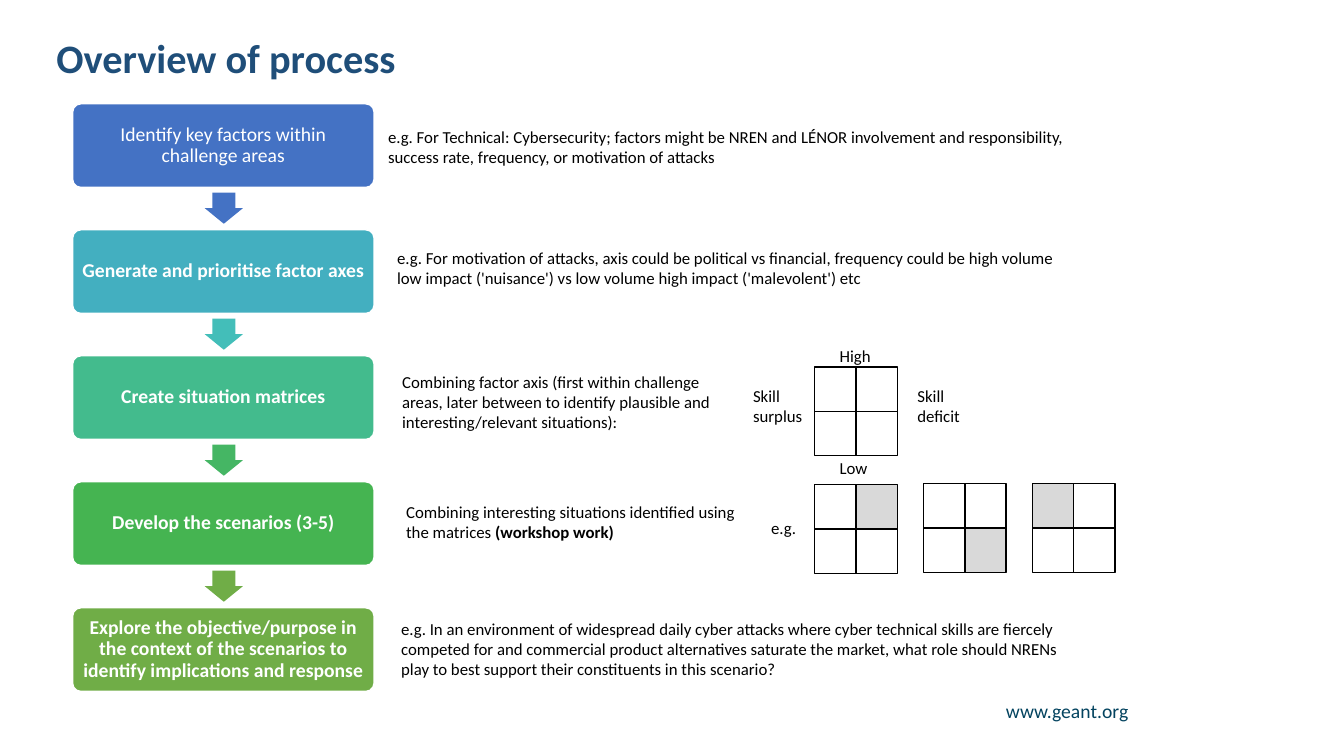
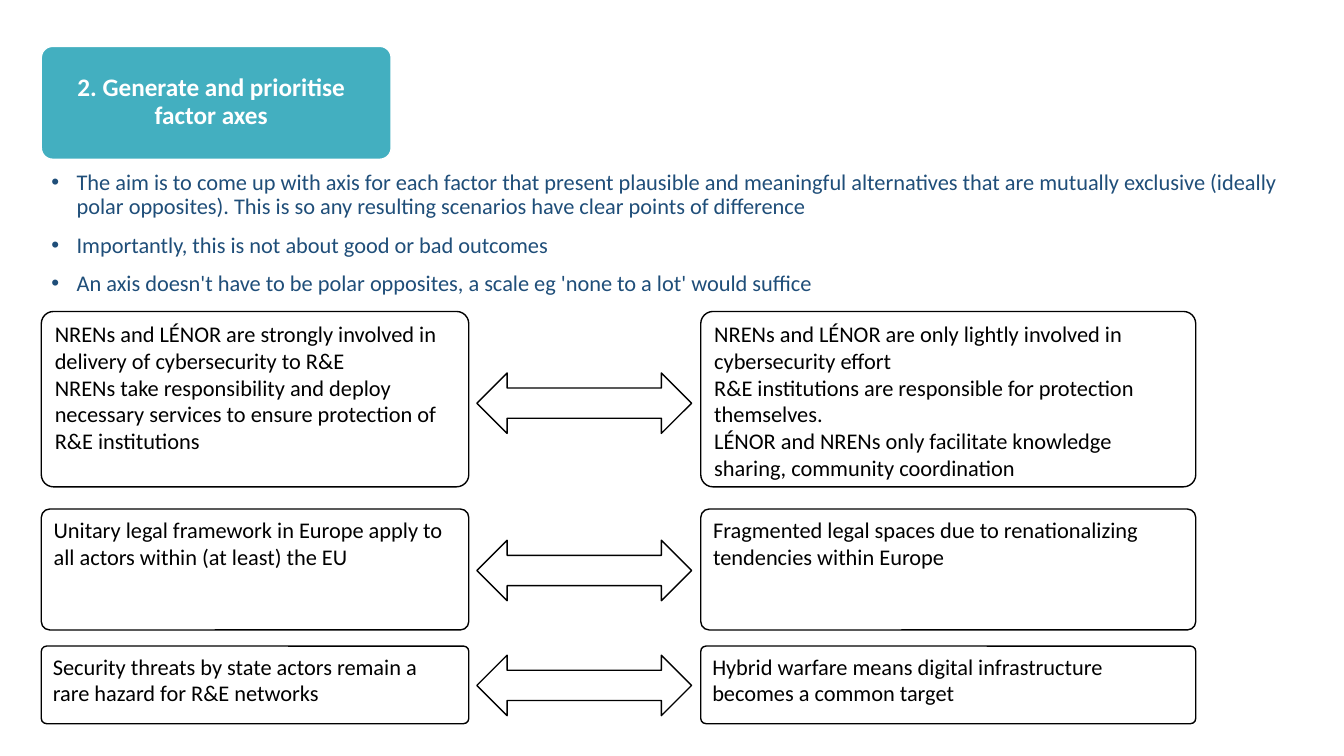
"""Build two slides on a scenario planning process."""
from pptx import Presentation
from pptx.dml.color import RGBColor
from pptx.enum.shapes import MSO_SHAPE
from pptx.enum.text import MSO_ANCHOR, MSO_AUTO_SIZE, PP_ALIGN
from pptx.util import Pt

PX = 9144
FONT = "Calibri"
NAVY = RGBColor(0x1F, 0x4E, 0x79)
PETROL = RGBColor(0x03, 0x43, 0x5F)
BLACK = RGBColor(0, 0, 0)
WHITE = RGBColor(0xFF, 0xFF, 0xFF)
GREY = RGBColor(0xD9, 0xD9, 0xD9)
BLUE = RGBColor(0x44, 0x72, 0xC4)
CYAN = RGBColor(0x43, 0xAF, 0xC0)
TURQUOISE = RGBColor(0x43, 0xBE, 0xB9)
SEA = RGBColor(0x43, 0xBB, 0x8D)
EMERALD = RGBColor(0x45, 0xB6, 0x64)
GREEN = RGBColor(0x45, 0xB4, 0x51)
OLIVE = RGBColor(0x70, 0xAD, 0x47)

TITLE = "Overview of process"
FOOTER = "www.geant.org"
STEPS = [
    ("Identify key factors within challenge areas", BLUE, False),
    ("Generate and prioritise factor axes", CYAN, True),
    ("Create situation matrices", SEA, True),
    ("Develop the scenarios (3-5)", GREEN, True),
    ("Explore the objective/purpose in the context of the scenarios to "
     "identify implications and response", OLIVE, True),
]
ARROW_FILLS = [BLUE, TURQUOISE, EMERALD, OLIVE]
NOTES = [
    ((375, 121, 698, 71),
     "e.g. For Technical: Cybersecurity; factors might be NREN and LÉNOR involvement "
     "and responsibility, success rate, frequency, or motivation of attacks"),
    ((384, 241, 698, 71),
     "e.g. For motivation of attacks, axis could be political vs financial, frequency "
     "could be high volume low impact ('nuisance') vs low volume high impact "
     "('malevolent') etc"),
    ((389, 364, 347, 91),
     "Combining factor axis (first within challenge areas, later between to identify "
     "plausible and interesting/relevant situations):"),
    ((388, 609, 698, 91),
     "e.g. In an environment of widespread daily cyber attacks where cyber technical "
     "skills are fiercely competed for and commercial product alternatives saturate the "
     "market, what role should NRENs play to best support their constituents in this "
     "scenario?"),
    ((823, 338, 56, 50), "High"),
    ((823, 449, 56, 50), "Low"),
    ((900, 378, 79, 71), "Skill deficit"),
    ((737, 378, 79, 71), "Skill surplus"),
    ((755, 509, 56, 50), "e.g."),
]
WORKSHOP_AT = (393, 493, 347, 50)
WORKSHOP = "Combining interesting situations identified using the matrices "
WORKSHOP_BOLD = "(workshop work)"
MATRICES = [(808, 364, None), (808, 481, 1), (916, 480, 3), (1024, 480, 0)]

AXES_TITLE = "2. Generate and prioritise factor axes"
AXES_POINTS = [
    "The aim is to come up with axis for each factor that present plausible and "
    "meaningful alternatives that are mutually exclusive (ideally polar opposites). "
    "This is so any resulting scenarios have clear points of difference",
    "Importantly, this is not about good or bad outcomes",
    "An axis doesn't have to be polar opposites, a scale eg 'none to a lot' would suffice",
]
AXES = [
    (309, 174, 370,
     ["NRENs and LÉNOR are strongly involved in delivery of cybersecurity to R&E",
      "NRENs take responsibility and deploy necessary services to ensure protection "
      "of R&E institutions"],
     ["NRENs and LÉNOR are only lightly involved in cybersecurity effort",
      "R&E institutions are responsible for protection themselves.",
      "LÉNOR and NRENs only facilitate knowledge sharing, community coordination"]),
    (505, 120, 536,
     ["Unitary legal framework in Europe apply to all actors within (at least) the EU"],
     ["Fragmented legal spaces due to renationalizing tendencies within Europe"]),
    (641, 77, 650,
     ["Security threats by state actors remain a rare hazard for R&E networks"],
     ["Hybrid warfare means digital infrastructure becomes a common target"]),
]


def emu(at):
    return [v * PX for v in at]


def place(sp, at):
    sp.left, sp.top, sp.width, sp.height = emu(at)


def write(sp, lines, size, color, bold=False, align=PP_ALIGN.LEFT,
          anchor=MSO_ANCHOR.TOP, spacing=1.0, gap=0, inset=None):
    tf = sp.text_frame
    tf.word_wrap = True
    tf.auto_size = MSO_AUTO_SIZE.NONE
    tf.vertical_anchor = anchor
    if inset is not None:
        tf.margin_left = tf.margin_right = inset * PX
        tf.margin_top = tf.margin_bottom = inset * PX
    tf.text = "\n".join(lines)
    for i, p in enumerate(tf.paragraphs):
        p.alignment = align
        p.line_spacing = spacing
        p.space_before = Pt(gap if i else 0)
        for r in p.runs:
            style(r, size, color, bold)
    return tf


def style(r, size, color, bold):
    r.font.name = FONT
    r.font.size = Pt(size)
    r.font.bold = bold
    r.font.color.rgb = color


def add_shape(s, kind, at, fill=None, line=None, adj=()):
    sp = s.shapes.add_shape(kind, *emu(at))
    sp.shadow.inherit = False
    for i, value in enumerate(adj):
        sp.adjustments[i] = value
    if fill is None:
        sp.fill.background()
    else:
        sp.fill.solid()
        sp.fill.fore_color.rgb = fill
    if line is None:
        sp.line.fill.background()
    else:
        sp.line.color.rgb = line
        sp.line.width = Pt(1)
    return sp


def add_text(s, at, text, size=12, color=BLACK, **kw):
    return write(s.shapes.add_textbox(*emu(at)), [text], size, color, **kw)


def add_matrix(s, left, top, shaded):
    for i in range(4):
        row, col = divmod(i, 2)
        add_shape(s, MSO_SHAPE.RECTANGLE, (left + col * 41, top + row * 44, 41, 44),
                  GREY if i == shaded else None, BLACK)


def step_text(sp, text, size, bold):
    write(sp, [text], size, WHITE, bold, PP_ALIGN.CENTER, MSO_ANCHOR.MIDDLE, 0.9, inset=6)


def overview_slide(prs):
    s = prs.slides.add_slide(prs.slide_layouts[5])
    title = s.shapes.title
    place(title, (46, 36, 1082, 47))
    write(title, [TITLE], 28.8, NAVY, True, anchor=MSO_ANCHOR.MIDDLE, spacing=0.9)
    add_text(s, (961, 691, 168, 37), FOOTER, 14, PETROL, align=PP_ALIGN.RIGHT, spacing=0.9)
    for i, (text, fill, bold) in enumerate(STEPS):
        sp = add_shape(s, MSO_SHAPE.ROUNDED_RECTANGLE, (72, 103 + i * 125, 299, 83),
                       fill, WHITE, [0.1])
        step_text(sp, text, 14, bold)
    for i, fill in enumerate(ARROW_FILLS):
        add_shape(s, MSO_SHAPE.DOWN_ARROW, (203, 191 + i * 125, 38, 31), fill, adj=[0.6, 0.5])
    for at, text in NOTES:
        add_text(s, at, text)
    tf = add_text(s, WORKSHOP_AT, WORKSHOP)
    r = tf.paragraphs[0].add_run()
    r.text = WORKSHOP_BOLD
    style(r, 12, BLACK, True)
    for matrix in MATRICES:
        add_matrix(s, *matrix)


def axes_slide(prs):
    s = prs.slides.add_slide(prs.slide_layouts[1])
    title, body = s.shapes.title, s.placeholders[1]
    card = add_shape(s, MSO_SHAPE.ROUNDED_RECTANGLE, (41, 46, 347, 112), CYAN, WHITE, [0.1])
    title._element.addprevious(card._element)
    place(title, (44, 49, 331, 105))
    step_text(title, AXES_TITLE, 18, True)
    place(body, (41, 165, 1238, 137))
    tf = write(body, AXES_POINTS, 16, NAVY, spacing=0.9, gap=10)
    for p in tf.paragraphs:
        pPr = p._p.get_or_add_pPr()
        pPr.set("marL", str(25 * PX))
        pPr.set("indent", str(-25 * PX))
    for top, height, arrow_top, left_lines, right_lines in AXES:
        add_shape(s, MSO_SHAPE.LEFT_RIGHT_ARROW, (473, arrow_top, 213, 60), WHITE, BLACK)
        for left, width, lines in ((41, 424, left_lines), (695, 491, right_lines)):
            sp = add_shape(s, MSO_SHAPE.ROUNDED_RECTANGLE, (left, top, width, height),
                           WHITE, BLACK, [0.07])
            write(sp, lines, 16, BLACK)


def main():
    prs = Presentation()
    prs.slide_width, prs.slide_height = emu((1333, 750))
    overview_slide(prs)
    axes_slide(prs)
    prs.save("out.pptx")


if __name__ == "__main__":
    main()
